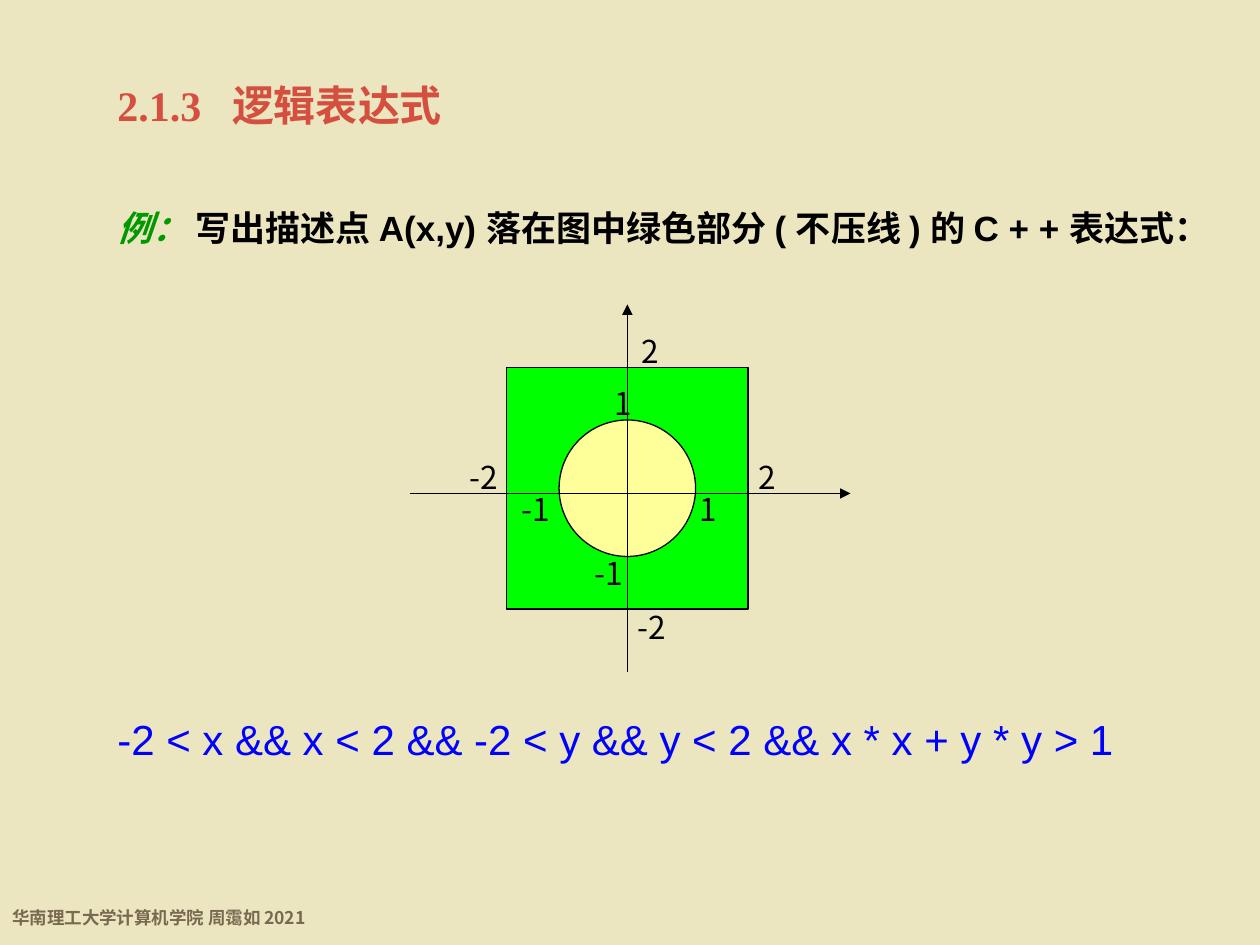
"""Builds the slide on logical expressions with its coordinate figure."""
from lxml.etree import SubElement
from pptx import Presentation
from pptx.dml.color import RGBColor
from pptx.enum.shapes import MSO_CONNECTOR, MSO_SHAPE
from pptx.enum.text import MSO_ANCHOR, PP_ALIGN
from pptx.oxml.ns import qn
from pptx.util import Pt

BACKGROUND = RGBColor(0xEC, 0xE6, 0xC0)
BLACK = RGBColor(0, 0, 0)
RED = RGBColor(0xD5, 0x4F, 0x41)
DARK_GREEN = RGBColor(0, 0x99, 0)
GREEN = RGBColor(0, 0xFF, 0)
YELLOW = RGBColor(0xFF, 0xFF, 0x99)
BLUE = RGBColor(0, 0, 0xFF)
BROWN = RGBColor(0x78, 0x69, 0x50)
NOTO = "Noto Sans CJK SC"


def add_text(shapes, box, runs, size, color, font, bold=False, wrap=True, anchor=MSO_ANCHOR.MIDDLE):
    tf = shapes.add_textbox(*map(Pt, box)).text_frame
    tf.word_wrap = wrap
    tf.vertical_anchor = anchor
    p = tf.paragraphs[0]
    for text in runs:
        p.add_run().text = text
    p.font.size = Pt(size)
    p.font.bold = bold
    p.font.name = font
    p.font.color.rgb = color
    return p


prs = Presentation()
prs.slide_width, prs.slide_height = Pt(720), Pt(540)
s = prs.slides.add_slide(prs.slide_layouts[6])
s.background.fill.solid()
s.background.fill.fore_color.rgb = BACKGROUND

add_text(s.shapes, (0, 510, 191.5, 24.5), ["华南理工大学计算机学院 周霭如 2021"],
         10, BROWN, NOTO, bold=True, wrap=False, anchor=MSO_ANCHOR.TOP).line_spacing = 1.4

figure = s.shapes.add_group_shape().shapes
for kind, left, top, side, color in [
    (MSO_SHAPE.RECTANGLE, 289.5, 210, 138, GREEN),
    (MSO_SHAPE.OVAL, 319.5, 240, 78, YELLOW),
]:
    sp = figure.add_shape(kind, Pt(left), Pt(top), Pt(side), Pt(side))
    sp.shadow.inherit = False
    sp.fill.solid()
    sp.fill.fore_color.rgb = color
    sp.line.color.rgb = BLACK
    sp.line.width = Pt(0.75)

for ends in [(234, 282, 486, 282), (358.5, 384, 358.5, 174)]:
    axis = figure.add_connector(MSO_CONNECTOR.STRAIGHT, *map(Pt, ends))
    axis.line.color.rgb = BLACK
    axis.line.width = Pt(0.75)
    SubElement(axis.line._get_or_add_ln(), qn("a:tailEnd"), type="triangle")
    SubElement(axis._element.spPr, qn("a:effectLst"))

label_widths = {" 2": 32.5, " -2": 41, " -1": 41, "1": 23}
for text, left, top in [
    (" -2", 350, 343.5), (" 2", 420, 258), (" 2", 353.5, 186), (" -2", 254, 258),
    (" -1", 283.5, 276), (" -1", 325.5, 313), ("1", 392.5, 276), ("1", 344, 216),
]:
    p = add_text(figure, (left, top, label_widths[text], 29), [text], 18, BLACK, NOTO, wrap=False)
    p.alignment = PP_ALIGN.CENTER

add_text(s.shapes, (60, 404, 596, 36),
         ["-2 < x && x < 2 && -2 < y && y < 2 && x * x + y * y > 1"], 24, BLUE, "Arial")

p = add_text(s.shapes, (60, 114, 651.5, 31.5),
             ["例：", " 写出描述点 A(x,y) 落在图中绿色部分 ( 不压线 ) 的 C + + 表达式："],
             20, BLACK, "Arial", bold=True)
p.runs[0].font.italic = True
p.runs[0].font.color.rgb = DARK_GREEN

tf = s.shapes.add_textbox(Pt(60), Pt(42), Pt(271.5), Pt(42)).text_frame
tf.word_wrap = True
p = tf.paragraphs[0]
tabs = SubElement(p._p.get_or_add_pPr(), qn("a:tabLst"))
SubElement(tabs, qn("a:tab"), pos=str(Pt(65.5)), algn="l")
for text, font in [("2.1.3\t", "Times New Roman"), ("逻辑表达式", NOTO)]:
    r = p.add_run()
    r.text = text
    r.font.name = font
p.font.size = Pt(24)
p.font.bold = True
p.font.color.rgb = RED

prs.save("out.pptx")
